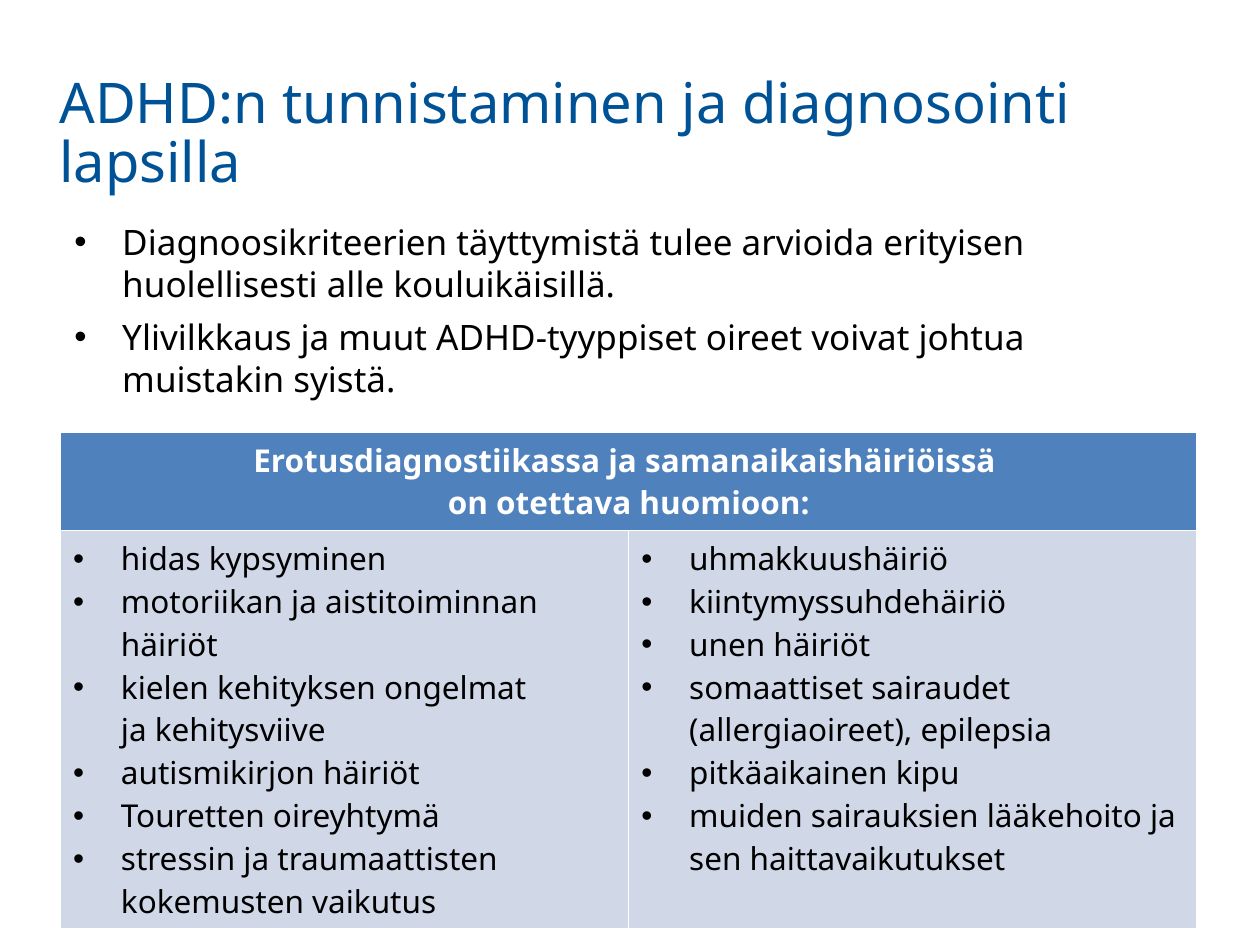
from pptx import Presentation
from pptx.dml.color import RGBColor
from pptx.enum.text import MSO_ANCHOR, MSO_AUTO_SIZE, PP_ALIGN
from pptx.oxml.ns import qn
from pptx.util import Inches, Pt

LEFT, CENTER = PP_ALIGN.LEFT, PP_ALIGN.CENTER
TOP, MIDDLE = MSO_ANCHOR.TOP, MSO_ANCHOR.MIDDLE
FONT = "Noto Sans"
BLUE, BLACK, WHITE = "005296", "000000", "FFFFFF"
HEADER_FILL, BODY_FILL = "4F81BD", "D0D8E8"
INDENT = Inches(0.38)

TITLE = "ADHD:n tunnistaminen ja diagnosointi lapsilla"
POINTS = [
    "Diagnoosikriteerien täyttymistä tulee arvioida erityisen huolellisesti alle kouluikäisillä.",
    "Ylivilkkaus ja muut ADHD-tyyppiset oireet voivat johtua muistakin syistä.",
]
TABLE_HEADER = [
    "Erotusdiagnostiikassa ja samanaikaishäiriöissä ",
    "on otettava huomioon:",
]
TABLE_COLUMNS = [
    [
        "hidas kypsyminen",
        "motoriikan ja aistitoiminnan häiriöt",
        "kielen kehityksen ongelmat \vja kehitysviive",
        "autismikirjon häiriöt",
        "Touretten oireyhtymä",
        "stressin ja traumaattisten kokemusten vaikutus",
    ],
    [
        "uhmakkuushäiriö",
        "kiintymyssuhdehäiriö",
        "unen häiriöt",
        "somaattiset sairaudet (allergiaoireet), epilepsia",
        "pitkäaikainen kipu",
        "muiden sairauksien lääkehoito ja sen haittavaikutukset",
    ],
]


def color(hex_value):
    return RGBColor.from_string(hex_value)


def add_bullet(paragraph):
    properties = paragraph._p.get_or_add_pPr()
    properties.set("marL", str(INDENT))
    properties.set("indent", str(-INDENT))
    font = properties.makeelement(qn("a:buFont"), {"typeface": "Arial"})
    bullet = properties.makeelement(qn("a:buChar"), {"char": "•"})
    properties.extend([font, bullet])


def write(frame, lines, size=18, fill=BLACK, bold=False, align=LEFT,
          bullets=False, spacing=None, before=0):
    for index, line in enumerate(lines):
        paragraph = frame.add_paragraph() if index else frame.paragraphs[0]
        paragraph.text = line
        paragraph.alignment = align
        paragraph.space_before = Pt(before)
        if spacing:
            paragraph.line_spacing = spacing
        if bullets:
            add_bullet(paragraph)
        for run in paragraph.runs:
            run.font.name = FONT
            run.font.size = Pt(size)
            run.font.bold = bold
            run.font.color.rgb = color(fill)


def place(shape, left, top, width, height, anchor):
    shape.left, shape.top = Inches(left), Inches(top)
    shape.width, shape.height = Inches(width), Inches(height)
    frame = shape.text_frame
    frame.word_wrap = True
    frame.auto_size = MSO_AUTO_SIZE.NONE
    frame.vertical_anchor = anchor
    return frame


def fill_cell(cell, lines, background, **text_format):
    cell.fill.solid()
    cell.fill.fore_color.rgb = color(background)
    write(cell.text_frame, lines, **text_format)


def main():
    presentation = Presentation()
    presentation.slide_width, presentation.slide_height = Inches(10), Inches(7.5)
    slide = presentation.slides.add_slide(presentation.slide_layouts[1])
    title, body = slide.placeholders

    write(place(title, 0.37, 0.44, 9.02, 1.26, MIDDLE), [TITLE],
          size=32, fill=BLUE, spacing=0.88)
    write(place(body, 0.49, 1.7, 9.02, 1.6, TOP), POINTS,
          size=20, bullets=True, spacing=Pt(24), before=6)

    table = slide.shapes.add_table(
        2, len(TABLE_COLUMNS), Inches(0.48), Inches(3.43), Inches(9.02), Inches(3.64)
    ).table
    table.rows[0].height, table.rows[1].height = Inches(0.73), Inches(2.91)
    header = table.cell(0, 0)
    header.merge(table.cell(0, len(TABLE_COLUMNS) - 1))
    fill_cell(header, TABLE_HEADER, HEADER_FILL, fill=WHITE, bold=True, align=CENTER)
    for column, items in enumerate(TABLE_COLUMNS):
        fill_cell(table.cell(1, column), items, BODY_FILL, bullets=True)

    presentation.save("out.pptx")


if __name__ == "__main__":
    main()
